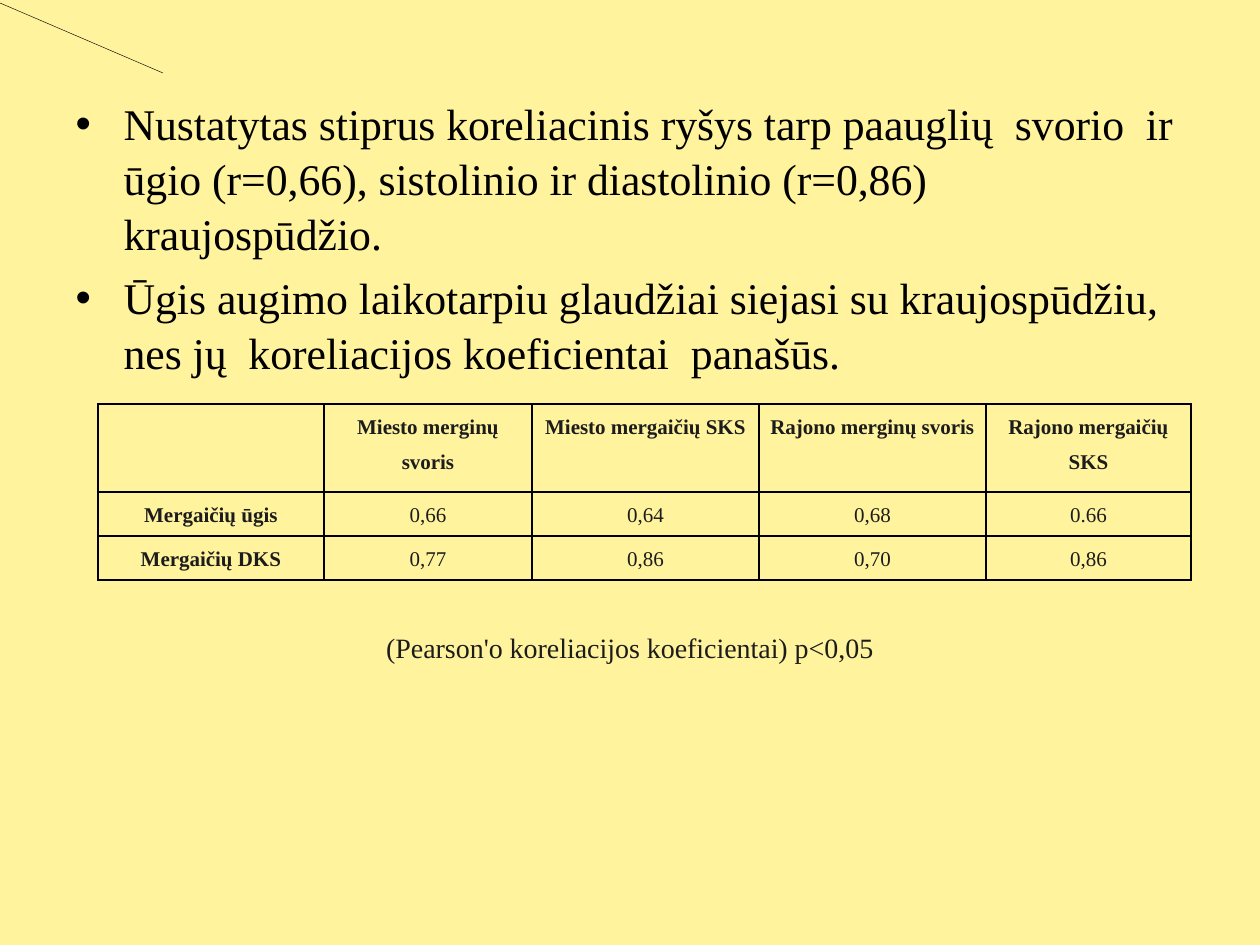
from dataclasses import dataclass

from lxml import etree
from pptx import Presentation
from pptx.dml.color import RGBColor
from pptx.enum.shapes import MSO_CONNECTOR
from pptx.enum.text import MSO_ANCHOR, MSO_AUTO_SIZE, PP_ALIGN
from pptx.oxml import parse_xml
from pptx.oxml.ns import nsdecls, qn
from pptx.util import Pt

STRAIGHT = MSO_CONNECTOR.STRAIGHT
CENTER, LEFT = PP_ALIGN.CENTER, PP_ALIGN.LEFT
TOP, MIDDLE = MSO_ANCHOR.TOP, MSO_ANCHOR.MIDDLE
NO_AUTOFIT = MSO_AUTO_SIZE.NONE
EMU_PER_PX = 914400 / 126


@dataclass(frozen=True)
class Theme:
    font: str = "Times New Roman"
    background: str = "FFF39D"
    black: str = "000000"
    ink: str = "1C1C1C"
    body_size: int = 25
    caption_size: int = 16
    table_size: int = 12
    border_width: float = 1
    line_width: float = 0.25


def px(length):
    return round(length * EMU_PER_PX)


def write_text(paragraph, text, *, font, size, color, bold=False,
               align=LEFT, line_spacing=1.0, space_before=0):
    paragraph.alignment = align
    paragraph.line_spacing = line_spacing
    paragraph.space_before = Pt(space_before)
    run = paragraph.add_run()
    run.text = text
    run.font.name = font
    run.font.size = Pt(size)
    run.font.bold = bold
    run.font.color.rgb = RGBColor.from_string(color)


def add_bullet(paragraph, indent):
    properties = paragraph._p.get_or_add_pPr()
    properties.set("marL", str(px(indent)))
    properties.set("indent", str(-px(indent)))
    etree.SubElement(properties, qn("a:buChar")).set("char", "•")


def add_borders(cell, color, width):
    properties = cell._tc.get_or_add_tcPr()
    for position, side in enumerate(("lnL", "lnR", "lnT", "lnB")):
        properties.insert(position, parse_xml(
            f'<a:{side} {nsdecls("a")} w="{Pt(width)}"><a:solidFill>'
            f'<a:srgbClr val="{color}"/></a:solidFill></a:{side}>'))


class SlideBuilder:
    def __init__(self, slide, theme):
        self.slide = slide
        self.theme = theme
        fill = slide.background.fill
        fill.solid()
        fill.fore_color.rgb = RGBColor.from_string(theme.background)

    def bullets(self, items, left, top, width, height, indent):
        body = self.slide.placeholders[1]
        body.left, body.top, body.width, body.height = map(
            px, (left, top, width, height))
        frame = body.text_frame
        frame.auto_size = NO_AUTOFIT
        frame.vertical_anchor = TOP
        for index, item in enumerate(items):
            paragraph = frame.add_paragraph() if index else frame.paragraphs[0]
            add_bullet(paragraph, indent)
            write_text(paragraph, item, font=self.theme.font,
                       size=self.theme.body_size, color=self.theme.black,
                       line_spacing=1.05, space_before=5 if index else 0)

    def table(self, rows, left, top, widths, heights):
        table = self.slide.shapes.add_table(
            len(rows), len(widths), px(left), px(top),
            px(sum(widths)), px(sum(heights))).table
        table.first_row = table.horz_banding = False
        for column, width in zip(table.columns, widths):
            column.width = px(width)
        for r, (row, height) in enumerate(zip(rows, heights)):
            table.rows[r].height = px(height)
            for c, value in enumerate(row):
                cell = table.cell(r, c)
                cell.fill.background()
                add_borders(cell, self.theme.black, self.theme.border_width)
                cell.margin_left = cell.margin_right = px(9)
                cell.margin_top = cell.margin_bottom = 0
                if value:
                    write_text(cell.text_frame.paragraphs[0], value,
                               font=self.theme.font, size=self.theme.table_size,
                               color=self.theme.ink, bold=r == 0 or c == 0,
                               align=CENTER, line_spacing=1.5)

    def line(self, *ends):
        line = self.slide.shapes.add_connector(STRAIGHT, *map(px, ends))
        line.line.color.rgb = RGBColor.from_string(self.theme.black)
        line.line.width = Pt(self.theme.line_width)
        etree.SubElement(line._element.spPr, qn("a:effectLst"))

    def caption(self, text, left, top, width, height):
        frame = self.slide.shapes.add_textbox(
            *map(px, (left, top, width, height))).text_frame
        frame.word_wrap = True
        frame.vertical_anchor = MIDDLE
        write_text(frame.paragraphs[0], text, font=self.theme.font,
                   size=self.theme.caption_size, color=self.theme.ink,
                   align=CENTER)


def main():
    deck = Presentation()
    deck.slide_width, deck.slide_height = px(1260), px(945)
    slide = deck.slides.add_slide(deck.slide_layouts[1])
    title = slide.shapes.title._element
    title.getparent().remove(title)

    builder = SlideBuilder(slide, Theme())
    findings = [
        "Nustatytas stiprus koreliacinis ryšys tarp paauglių  svorio  ir  ūgio "
        "(r=0,66), sistolinio ir diastolinio (r=0,86) kraujospūdžio.",
        "Ūgis augimo laikotarpiu glaudžiai siejasi su kraujospūdžiu, nes jų  "
        "koreliacijos koeficientai  panašūs.",
    ]
    correlations = [
        ["", "Miesto merginų svoris", "Miesto mergaičių SKS",
         "Rajono merginų svoris", "Rajono mergaičių SKS"],
        ["Mergaičių ūgis", "0,66", "0,64", "0,68", "0.66"],
        ["Mergaičių DKS", "0,77", "0,86", "0,70", "0,86"],
    ]
    builder.bullets(findings, 63, 88, 1134, 756, indent=48)
    builder.table(correlations, 98, 404, widths=[226, 208, 227, 227, 205],
                  heights=[88, 44, 44])
    builder.line(0, 3, 163, 73)
    builder.caption("(Pearson'o koreliacijos koeficientai) p<0,05",
                    0, 624, 1260, 47)
    deck.save("out.pptx")


if __name__ == "__main__":
    main()
